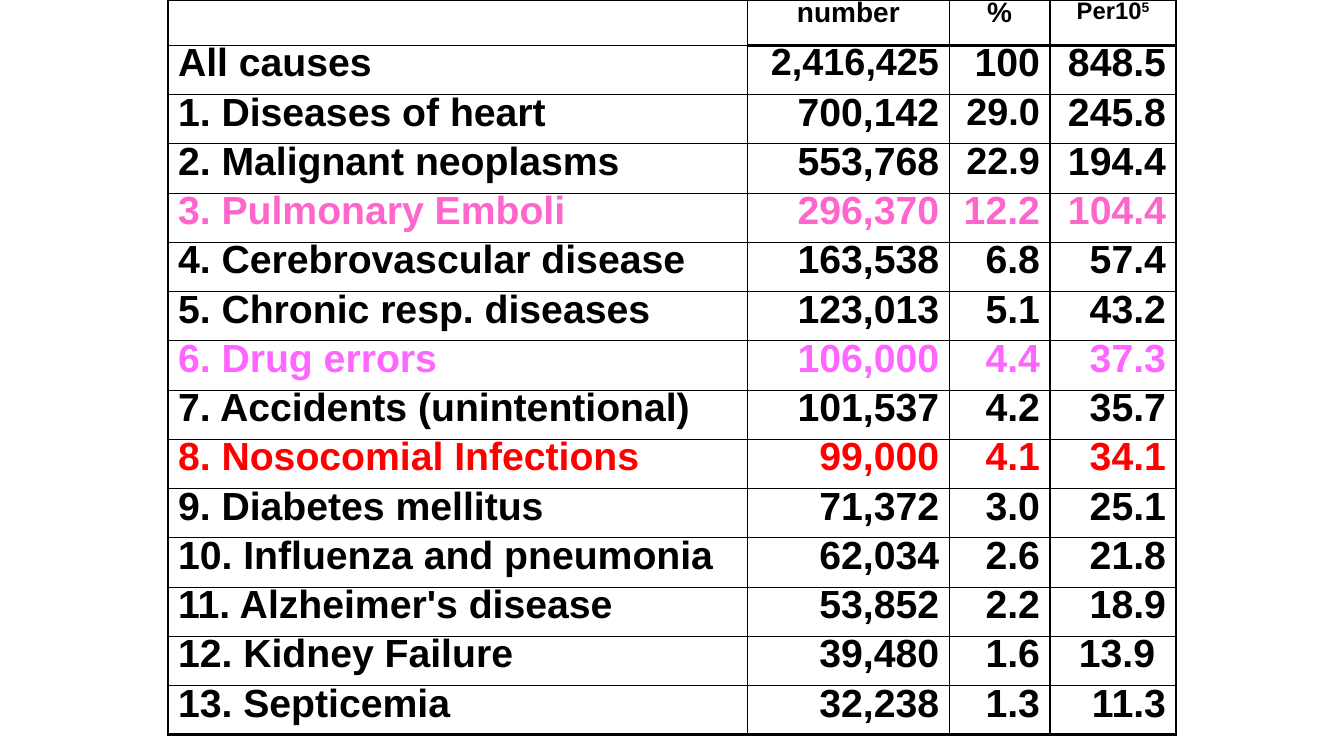
import dataclasses
from typing import Any

import pptx
import pptx.dml.color
import pptx.enum.text
import pptx.oxml
import pptx.oxml.ns
import pptx.util

Pt = pptx.util.Pt
ALIGN = pptx.enum.text.PP_ALIGN

BLACK, ROSE, VIOLET, RED = "000000", "FF66CC", "FF66FF", "FF0000"
THIN, THICK = 1, 2.25
BODY_SIZE, SMALLER_SIZE = 28, 27
COLUMN_WIDTHS = (414, 144, 72, 90)
HEADER_HEIGHT, BODY_HEIGHT = 32.4, 35.2
TABLE_LEFT, TABLE_TOP = 120, 0


@dataclasses.dataclass(frozen=True)
class Header:
    text: str
    size: float
    superscript: str = ""


@dataclasses.dataclass(frozen=True)
class Cause:
    name: str
    number: str
    percent: str
    rate: str
    color: str = BLACK

    def texts(self) -> tuple[str, ...]:
        return self.name, self.number, self.percent, self.rate


HEADERS = (Header("number", 20), Header("%", 20), Header("Per10", 17, "5"))
CAUSES = (
    Cause("All causes", "2,416,425", "100", "848.5"),
    Cause("1. Diseases of heart", "700,142", "29.0", "245.8"),
    Cause("2. Malignant neoplasms", "553,768", "22.9", "194.4"),
    Cause("3. Pulmonary Emboli", "296,370", "12.2", "104.4", ROSE),
    Cause("4. Cerebrovascular disease", "163,538", "6.8", "57.4"),
    Cause("5. Chronic resp. diseases", "123,013", "5.1", "43.2"),
    Cause("6. Drug errors", "106,000", "4.4", "37.3", VIOLET),
    Cause("7. Accidents (unintentional)", "101,537", "4.2", "35.7"),
    Cause("8. Nosocomial Infections", "99,000", "4.1", "34.1", RED),
    Cause("9. Diabetes mellitus", "71,372", "3.0", "25.1"),
    Cause("10. Influenza and pneumonia", "62,034", "2.6", "21.8"),
    Cause("11. Alzheimer's disease", "53,852", "2.2", "18.9"),
    Cause("12. Kidney Failure", "39,480", "1.6", "13.9 "),
    Cause("13. Septicemia", "32,238", "1.3", "11.3"),
)
SMALLER_TEXTS = {"2,416,425", "29.0", "22.9"}


def set_values(target: Any, values: dict[str, Any]) -> None:
    for name, value in values.items():
        setattr(target, name, value)


def rgb(color: str) -> pptx.dml.color.RGBColor:
    return pptx.dml.color.RGBColor.from_string(color)


def add_span(para: Any, text: str, size: float, color: str) -> Any:
    span = para.add_run()
    span.text = text
    set_values(span.font, {"name": "Arial", "size": Pt(size), "bold": True})
    span.font.color.rgb = rgb(color)
    return span


def start_para(cell: Any, alignment: Any) -> Any:
    para = cell.text_frame.paragraphs[0]
    set_values(para, {"alignment": alignment, "line_spacing": 0.9})
    return para


def add_border(cell: Any, side: str, width: float) -> None:
    cell._tc.get_or_add_tcPr().append(pptx.oxml.parse_xml(
        f'<a:ln{side} {pptx.oxml.ns.nsdecls("a")} w="{Pt(width)}">'
        f'<a:solidFill><a:srgbClr val="{BLACK}"/></a:solidFill></a:ln{side}>'
    ))


def format_cell(cell: Any, row: int, column: int) -> None:
    """Outer edges are thick, and so is the rule under the column headings."""
    thick = {
        "L": column == 0,
        "R": column == len(COLUMN_WIDTHS) - 1,
        "T": row == 0 or (row == 1 and column > 0),
        "B": row == len(CAUSES) or (row == 0 and column > 0),
    }
    for side, is_thick in thick.items():
        add_border(cell, side, THICK if is_thick else THIN)
    cell.fill.background()
    set_values(cell, {"margin_left": Pt(7.2), "margin_right": Pt(7.2),
                      "margin_top": 0, "margin_bottom": 0})


def add_mortality_table(page: Any) -> None:
    row_heights = [HEADER_HEIGHT] + [BODY_HEIGHT] * len(CAUSES)
    table = page.shapes.add_table(
        len(row_heights), len(COLUMN_WIDTHS), Pt(TABLE_LEFT), Pt(TABLE_TOP),
        Pt(sum(COLUMN_WIDTHS)), Pt(sum(row_heights)),
    ).table
    set_values(table, {"first_row": False, "horz_banding": False})
    for column, width in zip(table.columns, COLUMN_WIDTHS):
        column.width = Pt(width)
    for row, height in zip(table.rows, row_heights):
        row.height = Pt(height)
    for index, cell in enumerate(table.iter_cells()):
        format_cell(cell, *divmod(index, len(COLUMN_WIDTHS)))

    # Column headings
    for column, header in enumerate(HEADERS, start=1):
        para = start_para(table.cell(0, column), ALIGN.CENTER)
        add_span(para, header.text, header.size, BLACK)
        if header.superscript:
            span = add_span(para, header.superscript, header.size, BLACK)
            span._r.get_or_add_rPr().set("baseline", "30000")

    # Causes of death
    for row, cause in enumerate(CAUSES, start=1):
        for column, text in enumerate(cause.texts()):
            alignment = ALIGN.RIGHT if column else ALIGN.LEFT
            size = SMALLER_SIZE if text in SMALLER_TEXTS else BODY_SIZE
            para = start_para(table.cell(row, column), alignment)
            add_span(para, text, size, cause.color)


def main() -> None:
    deck = pptx.Presentation()
    set_values(deck, {"slide_width": Pt(960), "slide_height": Pt(540)})
    page = deck.slides.add_slide(deck.slide_layouts.get_by_name("Blank"))
    add_mortality_table(page)
    deck.save("out.pptx")


if __name__ == "__main__":
    main()
